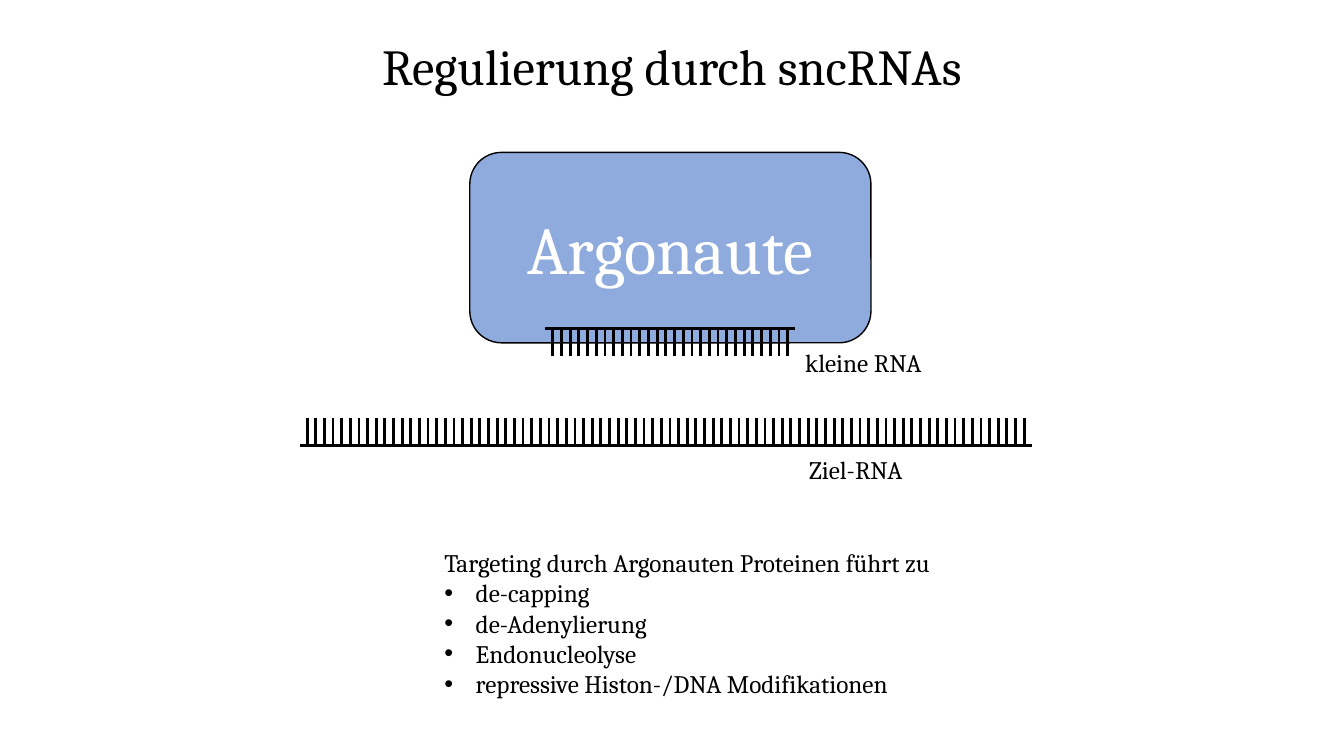
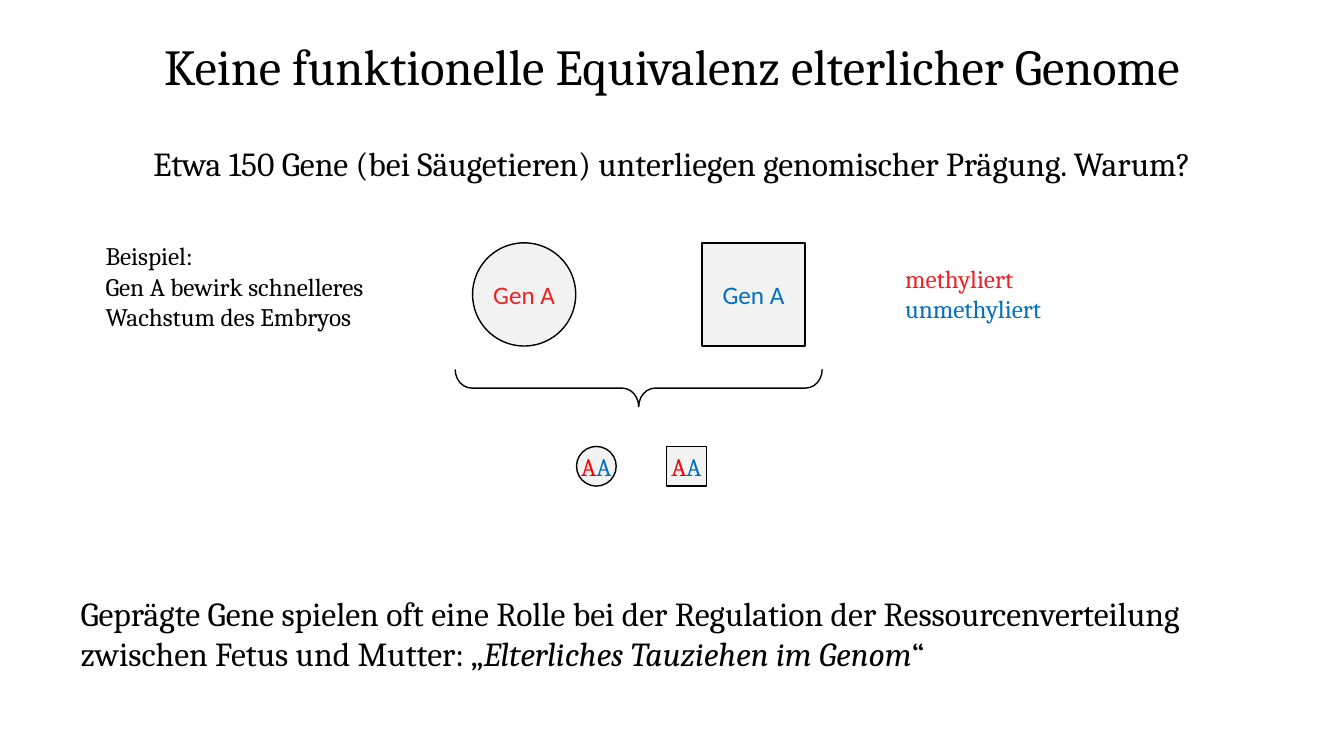
from lxml.etree import SubElement
from pptx import Presentation
from pptx.dml.color import RGBColor
from pptx.enum.shapes import MSO_CONNECTOR, MSO_SHAPE
from pptx.enum.text import MSO_ANCHOR, MSO_AUTO_SIZE, PP_ALIGN
from pptx.oxml.ns import qn
from pptx.util import Cm, Pt

WIDTH, HEIGHT = 33.87, 19.05
BLACK, WHITE = "000000", "FFFFFF"
PROTEIN_BLUE, PALE_GREY = "8FAADC", "F2F2F2"
RED, BRIGHT_RED, BLUE = "EB2226", "FF0000", "0070C0"


def colour(value):
    return RGBColor.from_string(value)


class Deck:
    font_name = "Cambria"
    title_size, lead_size, body_size = 36, 24, 18

    def __init__(self):
        self.presentation = Presentation()
        self.presentation.slide_width = Cm(WIDTH)
        self.presentation.slide_height = Cm(HEIGHT)
        self.slide = None

    def new_slide(self, title):
        layout = self.presentation.slide_layouts[6]
        self.slide = self.presentation.slides.add_slide(layout)
        self.text(0, 0.76, WIDTH, 1.8, [title], self.title_size, centred=True)

    def style(self, font, size, hex_colour, name=None, italic=None):
        font.name = name or self.font_name
        font.size = Pt(size)
        font.color.rgb = colour(hex_colour)
        if italic:
            font.italic = True

    def fill_paragraph(self, paragraph, content, size, hex_colour=BLACK, name=None):
        if isinstance(content, str):
            paragraph.add_run().text = content
            self.style(paragraph.font, size, hex_colour, name)
            return
        for words, run_colour, italic in content:
            run = paragraph.add_run()
            run.text = words
            self.style(run.font, size, run_colour, name, italic)

    def bullet(self, paragraph):
        properties = paragraph._p.get_or_add_pPr()
        properties.set("marL", str(Cm(0.79)))
        properties.set("indent", str(-Cm(0.79)))
        SubElement(properties, qn("a:buFont")).set("typeface", "Arial")
        SubElement(properties, qn("a:buChar")).set("char", "•")

    def text(self, left, top, width, height, contents, size=body_size,
             colours=(), centred=False, bullets_from=None):
        box = self.slide.shapes.add_textbox(Cm(left), Cm(top), Cm(width), Cm(height))
        frame = box.text_frame
        frame.word_wrap = True
        frame.auto_size = MSO_AUTO_SIZE.SHAPE_TO_FIT_TEXT
        for index, content in enumerate(contents):
            paragraph = frame.paragraphs[0] if index == 0 else frame.add_paragraph()
            if centred:
                paragraph.alignment = PP_ALIGN.CENTER
            if bullets_from is not None and index >= bullets_from:
                self.bullet(paragraph)
            self.fill_paragraph(paragraph, content, size,
                                colours[index] if colours else BLACK)

    def shape(self, kind, left, top, width, height, fill=None):
        shape = self.slide.shapes.add_shape(kind, Cm(left), Cm(top), Cm(width), Cm(height))
        shape.shadow.inherit = False
        if fill:
            shape.fill.solid()
            shape.fill.fore_color.rgb = colour(fill)
        else:
            shape.fill.background()
        shape.line.color.rgb = colour(BLACK)
        shape.line.width = Pt(1)
        return shape

    def labelled_shape(self, kind, left, top, width, height, fill, label,
                       size=body_size, hex_colour=BLACK, name=None):
        shape = self.shape(kind, left, top, width, height, fill)
        frame = shape.text_frame
        frame.word_wrap = False
        frame.vertical_anchor = MSO_ANCHOR.MIDDLE
        frame.margin_left = frame.margin_right = 0
        frame.margin_top = frame.margin_bottom = 0
        paragraph = frame.paragraphs[0]
        paragraph.alignment = PP_ALIGN.CENTER
        self.fill_paragraph(paragraph, label, size, hex_colour, name)

    def brace_below(self, left, top, width, height):
        brace = self.shape(MSO_SHAPE.RIGHT_BRACE, left + (width - height) / 2,
                           top + (height - width) / 2, height, width)
        brace.rotation = 90
        brace.adjustments[0] = 0.443
        brace.adjustments[1] = 0.5

    def line(self, shapes, start_x, start_y, end_x, end_y):
        connector = shapes.add_connector(MSO_CONNECTOR.STRAIGHT, Cm(start_x), Cm(start_y),
                                         Cm(end_x), Cm(end_y))
        connector.line.color.rgb = colour(BLACK)
        connector.line.width = Pt(2)
        SubElement(connector._element.spPr, qn("a:effectLst"))

    def rna_strand(self, left, right, backbone_y, base_y, base_count, overhang=0.19):
        shapes = self.slide.shapes.add_group_shape().shapes
        step = (right - left - 2 * overhang) / (base_count - 1)
        for index in range(base_count):
            x = left + overhang + index * step
            self.line(shapes, x, backbone_y, x, base_y)
        self.line(shapes, left, backbone_y, right, backbone_y)


def build_regulation(deck):
    deck.new_slide("Regulierung durch sncRNAs")
    deck.labelled_shape(MSO_SHAPE.ROUNDED_RECTANGLE, 11.84, 3.84, 10.11, 4.8,
                        PROTEIN_BLUE, "Argonaute", 48, WHITE)
    deck.rna_strand(13.74, 20.04, 8.28, 8.97, 28)
    deck.rna_strand(7.55, 26, 11.23, 10.54, 84)
    deck.text(20.04, 8.64, 4.75, 1.02, ["kleine RNA"])
    deck.text(20.14, 11.33, 4.75, 1.02, ["Ziel-RNA"])
    deck.text(10.95, 13.67, 16.66, 4.11, [
        "Targeting durch Argonauten Proteinen führt zu",
        "de-capping",
        "de-Adenylierung",
        "Endonucleolyse",
        "repressive Histon-/DNA Modifikationen",
    ], bullets_from=1)


def build_imprinting(deck):
    deck.new_slide("Keine funktionelle Equivalenz elterlicher Genome")
    deck.text(0, 3.48, WIDTH, 1.27,
              ["Etwa 150 Gene (bei Säugetieren) unterliegen genomischer Prägung. Warum?"],
              deck.lead_size, centred=True)
    deck.text(2.41, 5.94, 8.43, 2.57,
              ["Beispiel:", "Gen A bewirk schnelleres Wachstum des Embryos"])
    both_alleles = [("A", BRIGHT_RED, False), ("A", BLUE, False)]
    for kind, parent_left, parent_colour, child_left in (
            (MSO_SHAPE.OVAL, 11.91, RED, 14.53),
            (MSO_SHAPE.RECTANGLE, 17.69, BLUE, 16.8)):
        deck.labelled_shape(kind, parent_left, 6.12, 2.6, 2.6, PALE_GREY,
                            "Gen A", hex_colour=parent_colour, name="Calibri")
        deck.labelled_shape(kind, child_left, 11.25, 1, 1, PALE_GREY, both_alleles)
    deck.brace_below(11.47, 9.31, 9.25, 0.94)
    deck.text(22.56, 6.5, 4.8, 1.8, ["methyliert", "unmethyliert"], colours=(RED, BLUE))
    deck.text(1.78, 14.81, 31.01, 2.31, [[
        ("Geprägte Gene spielen oft eine Rolle bei der Regulation der "
         "Ressourcenverteilung zwischen Fetus und Mutter: „", BLACK, False),
        ("Elterliches Tauziehen im Genom", BLACK, True),
        ("“", BLACK, False),
    ]], deck.lead_size)


def main():
    deck = Deck()
    build_regulation(deck)
    build_imprinting(deck)
    deck.presentation.save("out.pptx")


if __name__ == "__main__":
    main()
